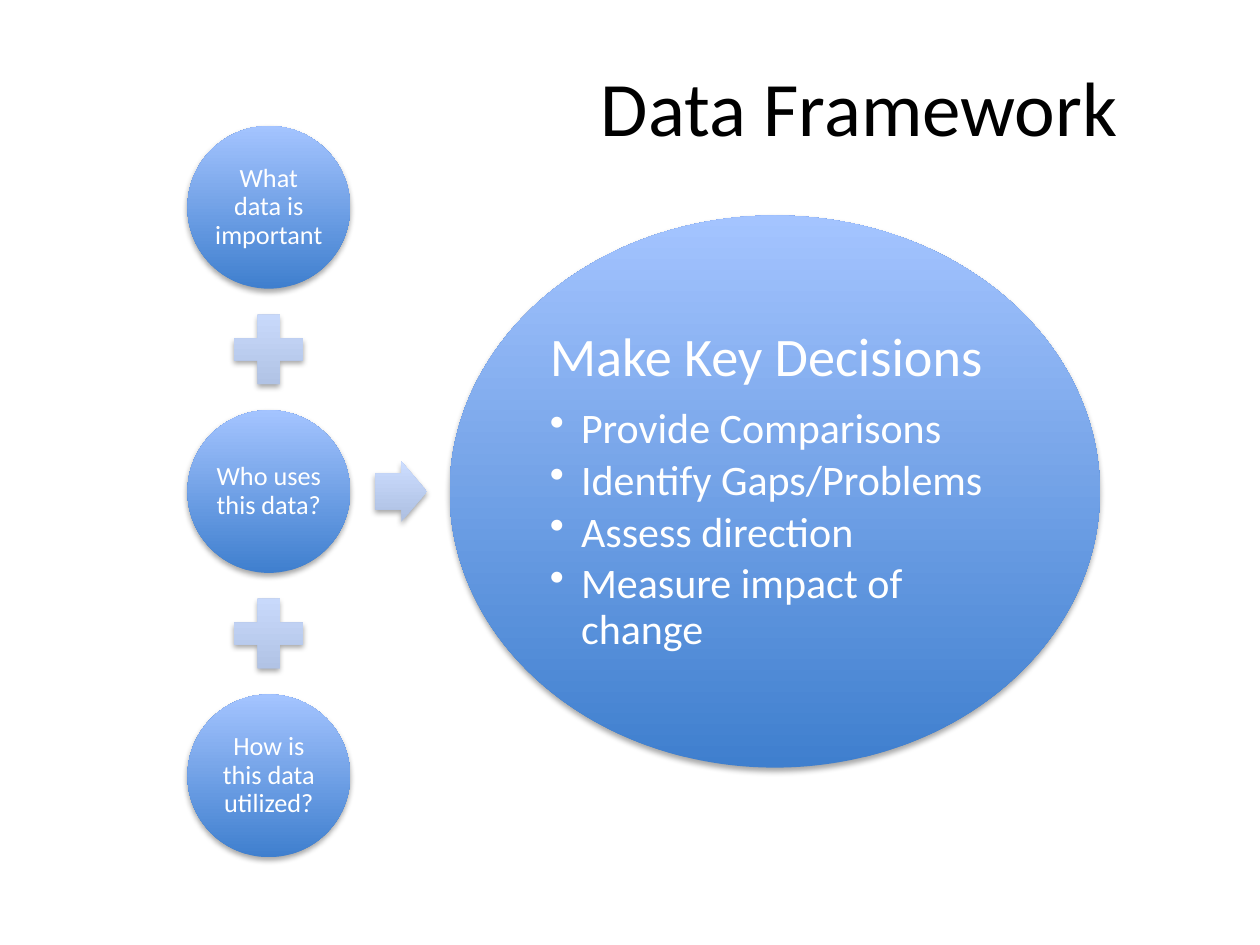
from dataclasses import dataclass

from lxml import etree
from pptx import Presentation
from pptx.dml.color import RGBColor
from pptx.enum.shapes import MSO_SHAPE
from pptx.enum.text import MSO_ANCHOR, PP_ALIGN
from pptx.oxml.ns import qn
from pptx.util import Cm, Pt

OVAL = MSO_SHAPE.OVAL
PLUS = MSO_SHAPE.MATH_PLUS
ARROW = MSO_SHAPE.RIGHT_ARROW
MIDDLE = MSO_ANCHOR.MIDDLE
LEFT = PP_ALIGN.LEFT
CENTER = PP_ALIGN.CENTER

FONT = "Calibri"
STRONG = ("3F7FCE", "A4C4FF")
PALE = ("ADBFE1", "CCDDFF")

AXIS = 5.42
MID = 9.91
STEP = 5.73
DISC = 3.28


@dataclass
class Form:
    kind: int
    x: float
    y: float
    width: float
    height: float
    shades: tuple[str, str]


@dataclass
class Line:
    text: str
    size: float
    align: int
    after: float
    bullet: bool = False


def tint(code: str) -> RGBColor:
    return RGBColor.from_string(code)


def assign(target, values: dict) -> None:
    for name, value in values.items():
        setattr(target, name, value)


def add_shade(shape) -> None:
    shape.shadow.inherit = False
    effects = shape._element.spPr.find(qn("a:effectLst"))
    outer = etree.SubElement(effects, qn("a:outerShdw"), blurRad="40000",
                             dist="23000", dir="5400000", rotWithShape="0")
    black = etree.SubElement(outer, qn("a:srgbClr"), val="000000")
    etree.SubElement(black, qn("a:alpha"), val="35000")


def draw_form(slide, form: Form):
    shape = slide.shapes.add_shape(
        form.kind, Cm(form.x - form.width / 2), Cm(form.y - form.height / 2),
        Cm(form.width), Cm(form.height))
    shape.fill.gradient()
    shape.fill.gradient_angle = 90
    for stop, code in zip(shape.fill.gradient_stops, form.shades):
        stop.color.rgb = tint(code)
    shape.line.fill.background()
    add_shade(shape)
    return shape


def add_bullet(para) -> None:
    props = para._p.get_or_add_pPr()
    props.set("marL", str(Cm(0.63)))
    props.set("indent", str(-Cm(0.63)))
    etree.SubElement(props, qn("a:buChar"), char="•")


def write_lines(shape, lines: list[Line], inset: float) -> None:
    frame = shape.text_frame
    pad = Cm(inset)
    assign(frame, {"word_wrap": True, "vertical_anchor": MIDDLE,
                   "margin_left": pad, "margin_right": pad,
                   "margin_top": pad, "margin_bottom": pad})
    for index, line in enumerate(lines):
        para = frame.add_paragraph() if index else frame.paragraphs[0]
        assign(para, {"alignment": line.align, "line_spacing": 0.9,
                      "space_after": Pt(line.size * line.after),
                      "level": int(line.bullet)})
        if line.bullet:
            add_bullet(para)
        run = para.add_run()
        run.text = line.text
        assign(run.font, {"name": FONT, "size": Pt(line.size)})
        run.font.color.rgb = tint("FFFFFF")


def set_title(slide, text: str) -> None:
    title = slide.shapes.title
    assign(title, {"left": Cm(10.87), "top": Cm(0.76),
                   "width": Cm(13.26), "height": Cm(2.74)})
    title.text_frame.vertical_anchor = MIDDLE
    para = title.text_frame.paragraphs[0]
    para.alignment = CENTER
    run = para.add_run()
    run.text = text
    assign(run.font, {"name": FONT, "size": Pt(44)})
    run.font.color.rgb = tint("000000")


def main() -> None:
    deck = Presentation()
    assign(deck, {"slide_width": Cm(25.4), "slide_height": Cm(19.05)})
    slide = deck.slides.add_slide(deck.slide_layouts[5])
    set_title(slide, "Data Framework ")

    asks = ["What data is important", "Who uses this data?",
            "How is this data utilized?"]
    for index, ask in enumerate(asks):
        y = MID + (index - 1) * STEP
        if index:
            draw_form(slide, Form(PLUS, AXIS, y - STEP / 2, 1.9, 1.9, PALE))
        disc = draw_form(slide, Form(OVAL, AXIS, y, DISC, DISC, STRONG))
        write_lines(disc, [Line(ask, 15, CENTER, 0.35)], 0.05)

    arrow = draw_form(slide, Form(ARROW, 8.09, MID, 1.04, 1.22, PALE))
    arrow.adjustments[0] = 0.6
    arrow.adjustments[1] = 0.5

    goal = draw_form(slide, Form(OVAL, 15.62, MID, 13.11, 11.13, STRONG))
    aims = ["Provide Comparisons", "Identify Gaps/Problems",
            "Assess direction", "Measure impact of change"]
    lines = [Line("Make Key Decisions", 31, LEFT, 0.35)]
    lines += [Line(aim, 24, LEFT, 0.15, True) for aim in aims]
    write_lines(goal, lines, 0.1)

    deck.save("out.pptx")


if __name__ == "__main__":
    main()
